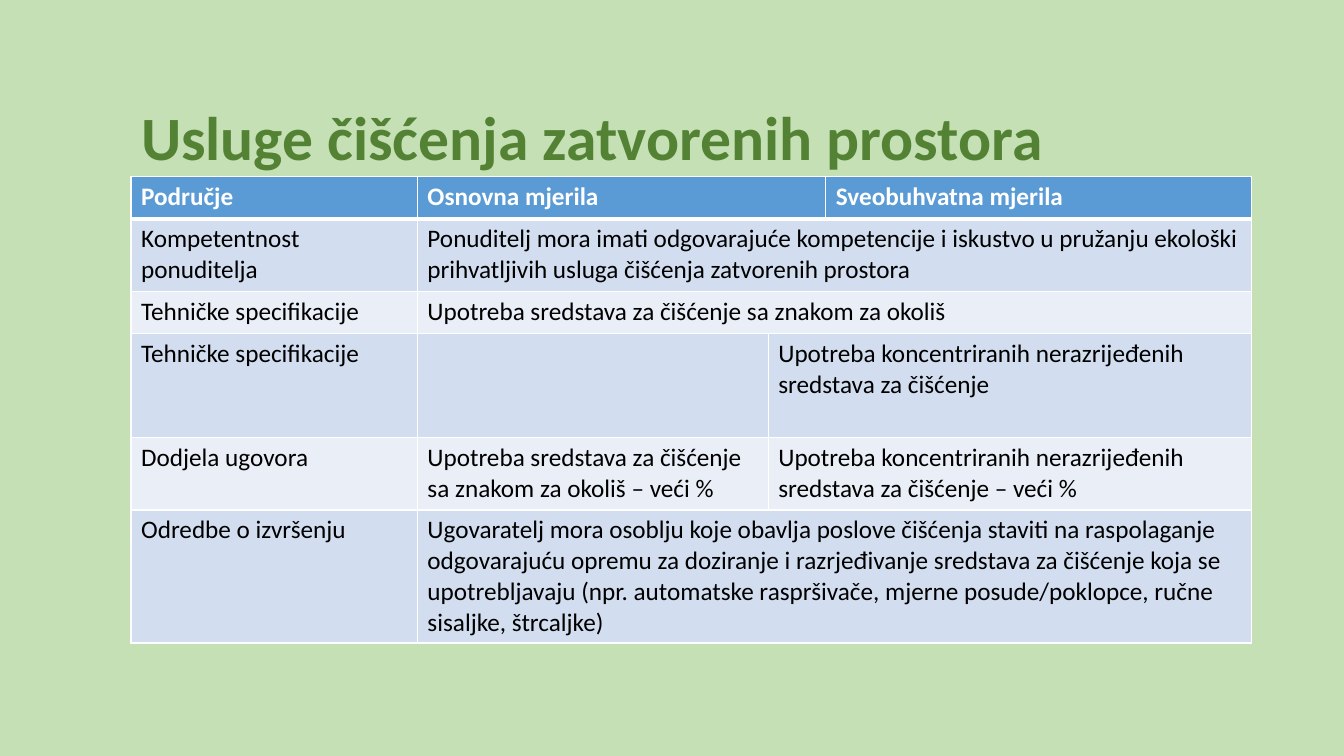
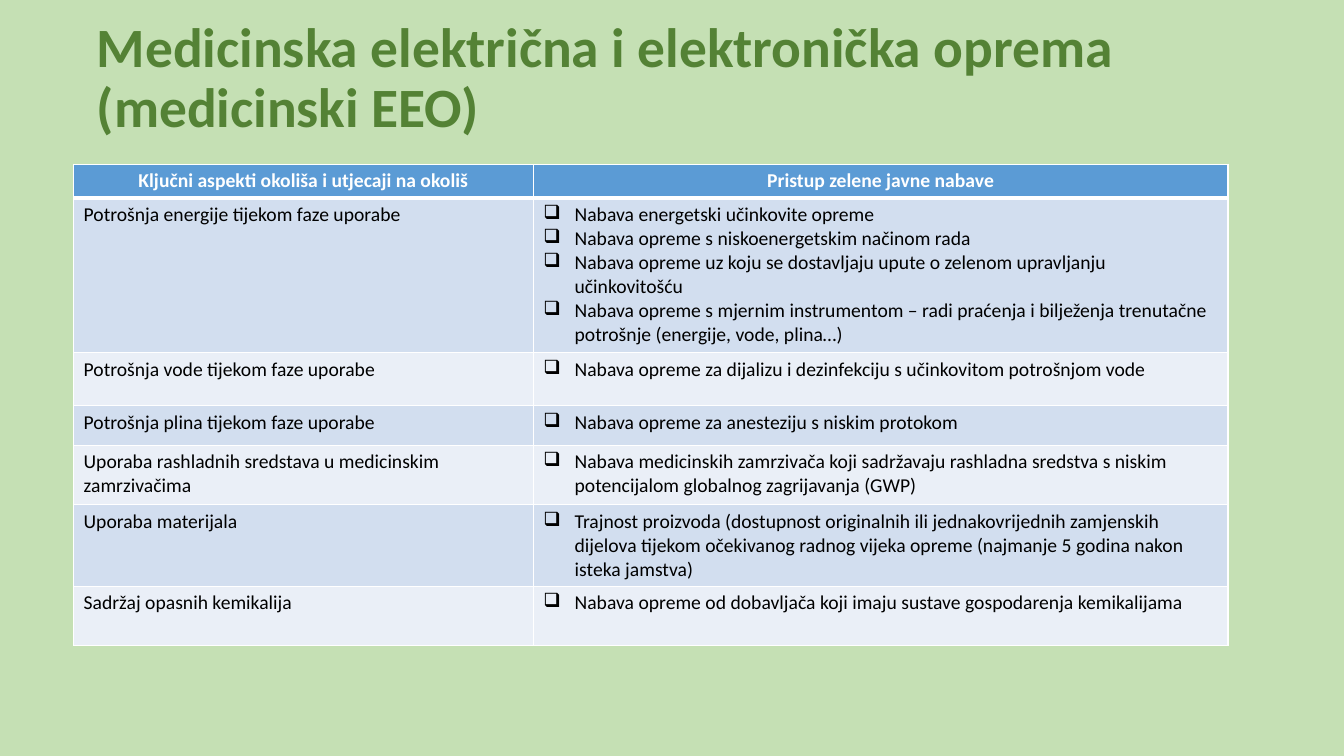
from dataclasses import dataclass
from typing import Optional

from lxml import etree
from pptx import Presentation
from pptx.dml.color import RGBColor
from pptx.enum import text
from pptx.oxml import ns
from pptx.util import Emu, Inches, Pt

BACKGROUND = RGBColor(0xC5, 0xE0, 0xB4)
TITLE_GREEN = RGBColor(0x54, 0x82, 0x35)
HEADER_BLUE = RGBColor(0x5B, 0x9B, 0xD5)
BANDS = (RGBColor(0xD2, 0xDE, 0xEF), RGBColor(0xEA, 0xEF, 0xF7))
WHITE = RGBColor(0xFF, 0xFF, 0xFF)
BLACK = RGBColor(0x00, 0x00, 0x00)
FONT = "Calibri"
BULLET = "❑"
BULLET_INDENT = Inches(0.31)
THIN, THICK = Pt(1), Pt(3)

Box = tuple[float, float, float, float]
# None continues the cell to its left; a line break starts a new paragraph.
Row = tuple[Optional[str], ...]


@dataclass(frozen=True)
class TableSlide:
    title: str
    title_box: Box
    title_size: float
    table_left: float
    table_top: float
    column_widths: tuple[float, ...]
    row_heights: tuple[float, ...]
    rows: tuple[Row, ...]
    text_size: float
    header_alignment: text.PP_ALIGN = text.PP_ALIGN.LEFT
    bulleted_column: Optional[int] = None


CLEANING = TableSlide(
    title="Usluge čišćenja zatvorenih prostora",
    title_box=(1.3, 0.85, 10.89, 1.09),
    title_size=44,
    table_left=1.3,
    table_top=1.75,
    column_widths=(2.84, 3.48, 0.57, 4.22),
    row_heights=(0.42, 0.72, 0.42, 1.03, 0.72, 1.32),
    text_size=18,
    rows=(
        ("Područje", "Osnovna mjerila", None, "Sveobuhvatna mjerila"),
        ("Kompetentnost ponuditelja",
         "Ponuditelj mora imati odgovarajuće kompetencije i iskustvo u pružanju "
         "ekološki prihvatljivih usluga čišćenja zatvorenih prostora", None, None),
        ("Tehničke specifikacije",
         "Upotreba sredstava za čišćenje sa znakom za okoliš", None, None),
        ("Tehničke specifikacije", "",
         "Upotreba koncentriranih nerazrijeđenih sredstava za čišćenje", None),
        ("Dodjela ugovora",
         "Upotreba sredstava za čišćenje sa znakom za okoliš – veći %",
         "Upotreba koncentriranih nerazrijeđenih sredstava za čišćenje – veći %",
         None),
        ("Odredbe o izvršenju",
         "Ugovaratelj mora osoblju koje obavlja poslove čišćenja staviti na "
         "raspolaganje odgovarajuću opremu za doziranje i razrjeđivanje sredstava "
         "za čišćenje koja se upotrebljavaju (npr. automatske raspršivače, mjerne "
         "posude/poklopce, ručne sisaljke, štrcaljke)", None, None),
    ),
)

MEDICAL = TableSlide(
    title="Medicinska električna i elektronička oprema (medicinski EEO)",
    title_box=(0.86, 0.25, 10.62, 1.08),
    title_size=39.6,
    table_left=0.73,
    table_top=1.63,
    column_widths=(4.56, 6.89),
    row_heights=(0.33, 1.53, 0.53, 0.39, 0.59, 0.81, 0.59),
    text_size=14,
    header_alignment=text.PP_ALIGN.CENTER,
    bulleted_column=1,
    rows=(
        ("Ključni aspekti okoliša i utjecaji na okoliš",
         "Pristup zelene javne nabave"),
        ("Potrošnja energije tijekom faze uporabe",
         "Nabava energetski učinkovite opreme\n"
         "Nabava opreme s niskoenergetskim načinom rada\n"
         "Nabava opreme uz koju se dostavljaju upute o zelenom upravljanju "
         "učinkovitošću\n"
         "Nabava opreme s mjernim instrumentom – radi praćenja i bilježenja "
         "trenutačne potrošnje (energije, vode, plina…)"),
        ("Potrošnja vode tijekom faze uporabe",
         "Nabava opreme za dijalizu i dezinfekciju s učinkovitom potrošnjom vode"),
        ("Potrošnja plina tijekom faze uporabe",
         "Nabava opreme za anesteziju s niskim protokom"),
        ("Uporaba rashladnih sredstava u medicinskim zamrzivačima",
         "Nabava medicinskih zamrzivača koji sadržavaju rashladna sredstva s "
         "niskim potencijalom globalnog zagrijavanja (GWP)"),
        ("Uporaba materijala",
         "Trajnost proizvoda (dostupnost originalnih ili jednakovrijednih "
         "zamjenskih dijelova tijekom očekivanog radnog vijeka opreme (najmanje "
         "5 godina nakon isteka jamstva)"),
        ("Sadržaj opasnih kemikalija",
         "Nabava opreme od dobavljača koji imaju sustave gospodarenja "
         "kemikalijama"),
    ),
)


def style_font(font, size: float, color: RGBColor, bold: bool) -> None:
    font.name = FONT
    font.size = Pt(size)
    font.bold = bold
    font.color.rgb = color


def set_borders(cell, top: Emu, bottom: Emu) -> None:
    """Give a cell white borders; call before its fill is set."""
    properties = cell._tc.get_or_add_tcPr()
    widths = {"a:lnL": THIN, "a:lnR": THIN, "a:lnT": top, "a:lnB": bottom}
    for tag, width in widths.items():
        line = etree.SubElement(properties, ns.qn(tag), w=str(int(width)))
        fill = etree.SubElement(line, ns.qn("a:solidFill"))
        etree.SubElement(fill, ns.qn("a:srgbClr"), val=str(WHITE))


def add_bullet(paragraph) -> None:
    properties = paragraph._p.get_or_add_pPr()
    properties.set("marL", str(int(BULLET_INDENT)))
    properties.set("indent", str(-int(BULLET_INDENT)))
    etree.SubElement(properties, ns.qn("a:buChar"), char=BULLET)


def add_title(slide, content: TableSlide) -> None:
    title = slide.shapes.title
    title.left, title.top, title.width, title.height = map(Inches, content.title_box)
    frame = title.text_frame
    frame.text = content.title
    frame.word_wrap = True
    frame.auto_size = text.MSO_AUTO_SIZE.NONE
    frame.vertical_anchor = text.MSO_ANCHOR.MIDDLE
    paragraph = frame.paragraphs[0]
    paragraph.alignment = text.PP_ALIGN.LEFT
    paragraph.line_spacing = 0.9
    style_font(paragraph.runs[0].font, content.title_size, TITLE_GREEN, True)


def fill_cell(cell, words: Optional[str], row: int, column: int,
              content: TableSlide) -> None:
    is_header = row == 0
    set_borders(cell, THICK if row == 1 else THIN, THICK if is_header else THIN)
    cell.fill.solid()
    cell.fill.fore_color.rgb = HEADER_BLUE if is_header else BANDS[(row - 1) % 2]
    if not words:
        return
    cell.text_frame.text = words
    for paragraph in cell.text_frame.paragraphs:
        if is_header:
            paragraph.alignment = content.header_alignment
        elif column == content.bulleted_column:
            add_bullet(paragraph)
        style_font(paragraph.runs[0].font, content.text_size,
                   WHITE if is_header else BLACK, is_header)


def merge_row(table, row: int, words: Row) -> None:
    """Join each filled cell with the None entries that follow it."""
    starts = [column for column, value in enumerate(words) if value is not None]
    for start, end in zip(starts, starts[1:] + [len(words)]):
        if end - start > 1:
            table.cell(row, start).merge(table.cell(row, end - 1))


def add_criteria_table(slide, content: TableSlide) -> None:
    table = slide.shapes.add_table(
        len(content.rows), len(content.column_widths),
        Inches(content.table_left), Inches(content.table_top),
        Inches(sum(content.column_widths)), Inches(sum(content.row_heights)),
    ).table
    table.horz_banding = False
    for column, width in zip(table.columns, content.column_widths):
        column.width = Inches(width)
    for row, height in zip(table.rows, content.row_heights):
        row.height = Inches(height)
    for row, words in enumerate(content.rows):
        for column, value in enumerate(words):
            fill_cell(table.cell(row, column), value, row, column, content)
        merge_row(table, row, words)


def main() -> None:
    presentation = Presentation()
    presentation.slide_width = Inches(13.33)
    presentation.slide_height = Inches(7.5)

    # Shared background
    background = presentation.slide_master.background.fill
    background.solid()
    background.fore_color.rgb = BACKGROUND

    # Slides
    title_only = presentation.slide_layouts.get_by_name("Title Only")
    for content in (CLEANING, MEDICAL):
        slide = presentation.slides.add_slide(title_only)
        add_title(slide, content)
        add_criteria_table(slide, content)

    presentation.save("out.pptx")


if __name__ == "__main__":
    main()
